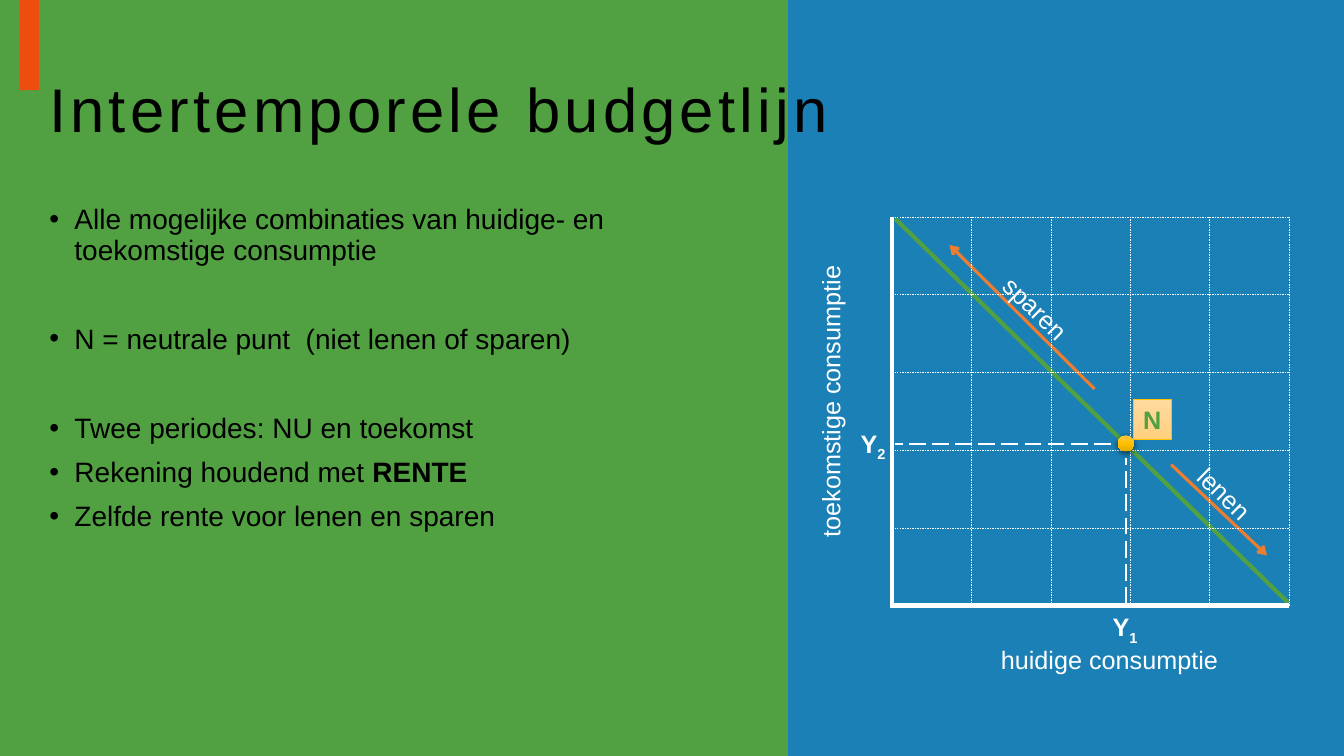
import copy
import pptx
import pptx.util
import pptx.dml.color
import pptx.enum.dml
import pptx.enum.shapes
import pptx.enum.text
import pptx.oxml
import pptx.oxml.ns

Pt = pptx.util.Pt
RGB = pptx.dml.color.RGBColor
Dash = pptx.enum.dml.MSO_LINE
Shape = pptx.enum.shapes.MSO_SHAPE
Fit = pptx.enum.text.MSO_AUTO_SIZE
Align = pptx.enum.text.PP_ALIGN
Anchor = pptx.enum.text.MSO_ANCHOR
qn = pptx.oxml.ns.qn

BLACK = RGB(0x00, 0x00, 0x00)
WHITE = RGB(0xFF, 0xFF, 0xFF)
GREEN = RGB(0x51, 0xA0, 0x41)
BLUE = RGB(0x1A, 0x80, 0xB6)
RED = RGB(0xED, 0x4D, 0x0F)
ORANGE = RGB(0xED, 0x7D, 0x31)
GOLD = RGB(0xFF, 0xC0, 0x00)
DOT = [RGB(0xFF, 0xC6, 0x4B), GOLD, RGB(0xE3, 0xAB, 0x00)]
SAND = [RGB(0xFF, 0xDB, 0x9E), RGB(0xFF, 0xD5, 0x90), RGB(0xFF, 0xD0, 0x7C)]
FONT = "Arial"

TITLE = "Intertemporele budgetlijn"
POINTS = [
    (10, [("Alle mogelijke combinaties van huidige- en toekomstige consumptie", False)]),
    (42, [("N = neutrale punt  (niet lenen of sparen)", False)]),
    (42, [("Twee periodes: NU en toekomst", False)]),
    (10, [("Rekening houdend met ", False), ("RENTE", True)]),
    (10, [("Zelfde rente voor lenen en sparen", False)]),
]
PANELS = [
    ((0, 0, 563, 540), GREEN),
    ((563, 0, 397, 540), BLUE),
    ((13.9, 0, 14, 64.5), RED),
]
MARKS = [
    ("Y", "2", (607.7, 302.4, 33, 29)),
    ("Y", "1", (787.7, 433.4, 33, 29)),
]
LABELS = [
    ("sparen", (704.9, 205.9, 70, 29), 44.1),
    ("lenen", (845.3, 338.4, 59, 29), 44.1),
    ("huidige consumptie", (707.8, 456.5, 171.4, 29), 0),
    ("toekomstige consumptie", (488.2, 271.4, 210.2, 29), 270),
]
LEFT, TOP, STEP_X, STEP_Y, COUNT = 637.2, 154.8, 56.7, 55.55, 5
RIGHT, BASE = LEFT + COUNT * STEP_X, TOP + COUNT * STEP_Y
LINES = [
    ((639.4, 156.2, 920.2, 430.6), GREEN, 3, None, False),
    ((793.4, 316.9, 639.4, 316.9), WHITE, 1.5, Dash.LONG_DASH, False),
    ((804.2, 431.3, 804.2, 326.9), WHITE, 1.5, Dash.LONG_DASH, False),
    ((836.6, 331.9, 905, 396.7), ORANGE, 2.25, None, True),
    ((781.9, 277.9, 678.2, 175), ORANGE, 2.25, None, True),
    ((LEFT, TOP, LEFT, BASE), WHITE, 3, None, False),
    ((RIGHT, BASE, LEFT - 1.5, BASE), WHITE, 3, None, False),
]
for i in range(COUNT):
    y = TOP + i * STEP_Y
    x = LEFT + (i + 1) * STEP_X
    LINES.append(((LEFT, y, RIGHT, y), WHITE, 0.25, Dash.DASH, False))
    LINES.append(((x, TOP, x, BASE), WHITE, 0.25, Dash.DASH, False))

deck = pptx.Presentation()
deck.slide_width, deck.slide_height = Pt(960), Pt(540)
slide = deck.slides.add_slide(deck.slide_layouts[1])
shapes = slide.shapes


def place(shape, box):
    shape.left, shape.top, shape.width, shape.height = map(Pt, box)


def style(font, size, color, bold=False):
    font.name, font.size, font.bold = FONT, Pt(size), bold
    font.color.rgb = color


def draw(kind, box):
    shape = shapes.add_shape(kind, *map(Pt, box))
    shape.shadow.inherit = False
    shape.line.fill.background()
    return shape


def shade(shape, colors):
    shape.fill.gradient()
    shape.fill.gradient_angle = 270
    stops = shape.element.spPr.find(".//" + qn("a:gsLst"))
    stops.insert(1, copy.deepcopy(stops[0]))
    stops[1].set("pos", "50000")
    for stop, color in zip(shape.fill.gradient_stops, colors):
        stop.color.rgb = color


def join(ends, color, width, dash, arrow):
    line = shapes.add_connector(
        pptx.enum.shapes.MSO_CONNECTOR.STRAIGHT, *map(Pt, ends))
    line.line.color.rgb = color
    line.line.width = Pt(width)
    if dash:
        line.line.dash_style = dash
    props = line.element.spPr
    if arrow:
        tail = pptx.oxml.parse_xml(
            '<a:tailEnd %s type="arrow"/>' % pptx.oxml.ns.nsdecls("a"))
        props.find(qn("a:ln")).append(tail)
    props.append(pptx.oxml.parse_xml(
        "<a:effectLst %s/>" % pptx.oxml.ns.nsdecls("a")))


def write(shape, texts, color, bold=False):
    frame = shape.text_frame
    frame.word_wrap = False
    frame.auto_size = Fit.SHAPE_TO_FIT_TEXT
    para = frame.paragraphs[0]
    for text in texts:
        para.add_run().text = text
    style(para.font, 18, color, bold)


def label(texts, box, bold=False):
    shape = shapes.add_textbox(*map(Pt, box))
    write(shape, texts, WHITE, bold)
    return shape


def last_run(shape):
    return shape.element.findall(".//" + qn("a:r"))[-1].get_or_add_rPr()


title = shapes.title
place(title, (28, 28, 908, 104.4))
title.text_frame.text = TITLE
title.text_frame.vertical_anchor = Anchor.MIDDLE
title.text_frame.auto_size = Fit.NONE
head = title.text_frame.paragraphs[0]
head.alignment = Align.LEFT
head.line_spacing = 0.9
style(head.font, 44, BLACK)
last_run(title).set("spc", "300")

for box, color in PANELS:
    panel = draw(Shape.RECTANGLE, box)
    panel.fill.solid()
    panel.fill.fore_color.rgb = color
    title.element.addprevious(panel.element)

body = slide.placeholders[1]
place(body, (28, 143.3, 516, 342.7))
frame = body.text_frame
frame.auto_size = Fit.NONE
for i, (gap, parts) in enumerate(POINTS):
    para = frame.add_paragraph() if i else frame.paragraphs[0]
    para.line_spacing = 0.9
    para.space_before = Pt(gap)
    style(para.font, 20, BLACK)
    for text, bold in parts:
        run = para.add_run()
        run.text = text
        if bold:
            run.font.bold = True
for props in body.element.iter(qn("a:pPr")):
    props.set("marL", str(Pt(18)))
    props.set("indent", str(Pt(-18)))
    props.find(qn("a:defRPr")).addprevious(pptx.oxml.parse_xml(
        '<a:buChar %s char="•"/>' % pptx.oxml.ns.nsdecls("a")))

for line in LINES:
    join(*line)

dot = draw(Shape.OVAL, (798.5, 311, 11.5, 11.5))
shade(dot, DOT)
dot.element.spPr.find(qn("a:effectLst")).append(pptx.oxml.parse_xml(
    '<a:outerShdw %s blurRad="57150" dist="19050" dir="5400000">'
    '<a:srgbClr val="000000"><a:alpha val="63000"/></a:srgbClr>'
    "</a:outerShdw>" % pptx.oxml.ns.nsdecls("a")))

for text, sub, box in MARKS:
    mark = label([text, sub], box, True)
    last_run(mark).set("baseline", "-25000")

point = draw(Shape.RECTANGLE, (809.3, 285.1, 27.4, 29))
shade(point, SAND)
point.line.color.rgb = GOLD
point.line.width = Pt(0.5)
write(point, ["N"], GREEN, True)

for text, box, turn in LABELS:
    label([text], box).rotation = turn

deck.save("out.pptx")
